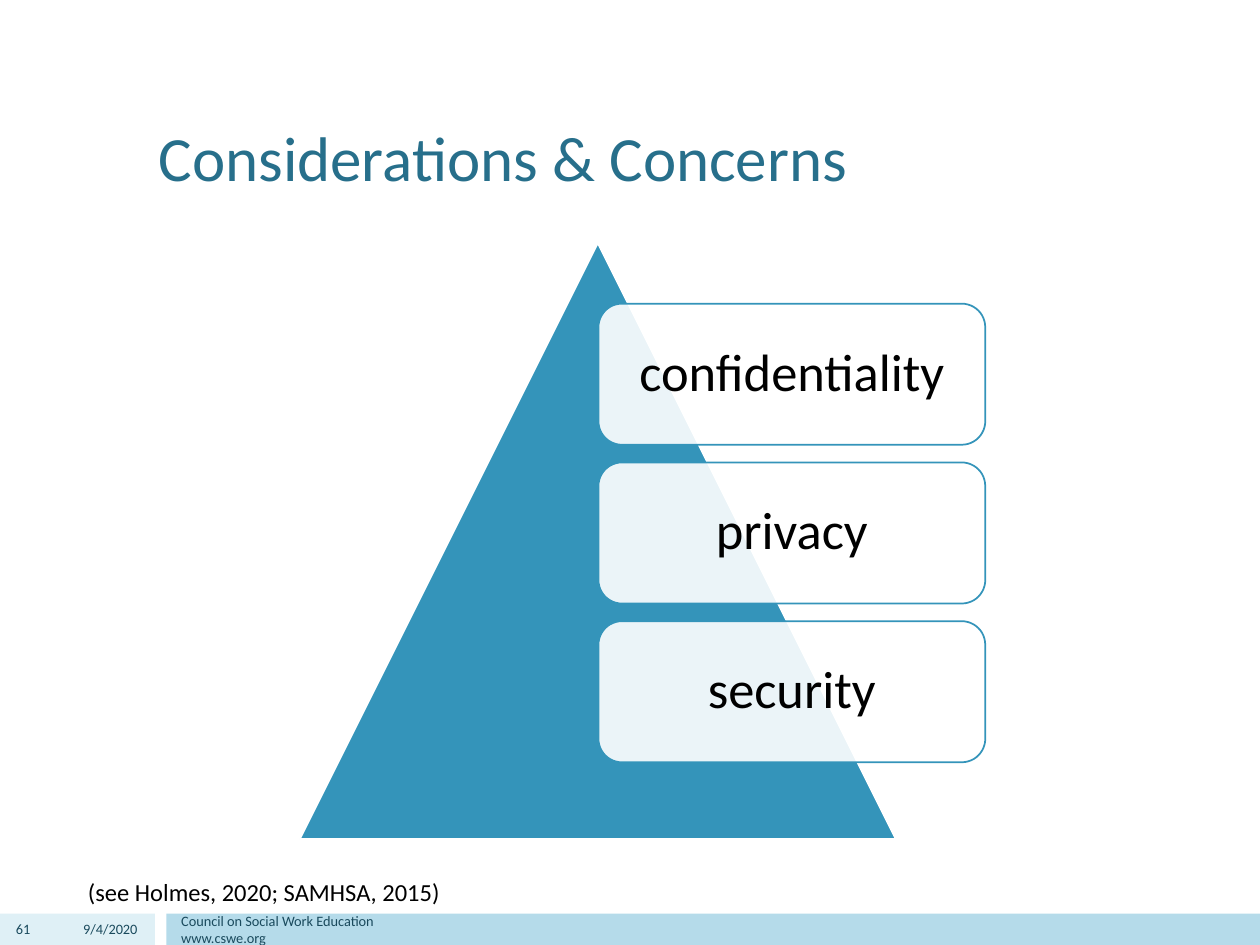
from lxml import etree
from pptx import Presentation
from pptx.dml.color import RGBColor
from pptx.enum.shapes import MSO_SHAPE
from pptx.enum.text import MSO_ANCHOR, MSO_AUTO_SIZE, PP_ALIGN
from pptx.oxml.ns import qn
from pptx.util import Inches, Pt

RECTANGLE = MSO_SHAPE.RECTANGLE
TRIANGLE = MSO_SHAPE.ISOSCELES_TRIANGLE
ROUNDED_RECTANGLE = MSO_SHAPE.ROUNDED_RECTANGLE
TOP, MIDDLE, BOTTOM = MSO_ANCHOR.TOP, MSO_ANCHOR.MIDDLE, MSO_ANCHOR.BOTTOM
LEFT, CENTER, RIGHT = PP_ALIGN.LEFT, PP_ALIGN.CENTER, PP_ALIGN.RIGHT
FIT_SHAPE = MSO_AUTO_SIZE.SHAPE_TO_FIT_TEXT

WHITE = RGBColor(0xFF, 0xFF, 0xFF)
BLACK = RGBColor(0x00, 0x00, 0x00)
BLUE = RGBColor(0x34, 0x94, 0xBA)
TITLE_BLUE = RGBColor(0x27, 0x6F, 0x8B)
FOOTER_BLUE = RGBColor(0x1A, 0x4A, 0x5D)
PALE_BLUE = RGBColor(0xDF, 0xF0, 0xF6)
LIGHT_BLUE = RGBColor(0xB5, 0xDB, 0xEA)

FONT = "Calibri"
FOOTER_TOP, FOOTER_HEIGHT = 7.25, 0.25
CONCERNS = ["confidentiality", "privacy", "security"]
CARD_TOP, CARD_STEP = 2.41, 1.26


def write_text(shape, text, size, color, alignment=LEFT, anchor=MIDDLE):
    frame = shape.text_frame
    frame.word_wrap = True
    frame.vertical_anchor = anchor
    frame.text = text
    paragraph = frame.paragraphs[0]
    paragraph.alignment = alignment
    for run in paragraph.runs:
        run.font.name = FONT
        run.font.size = Pt(size)
        run.font.color.rgb = color


def add_text(slide, box, text, size, color, alignment=LEFT, anchor=MIDDLE):
    shape = slide.shapes.add_textbox(*map(Inches, box))
    write_text(shape, text, size, color, alignment, anchor)
    return shape


def add_filled_shape(slide, kind, box, fill, line=None):
    shape = slide.shapes.add_shape(kind, *map(Inches, box))
    shape.shadow.inherit = False
    shape.fill.solid()
    shape.fill.fore_color.rgb = fill
    if line is None:
        shape.line.fill.background()
    else:
        shape.line.color.rgb = line
        shape.line.width = Pt(1)
    return shape


def set_opacity(shape, percent):
    color = shape.fill._xPr.find(qn("a:solidFill"))[0]
    etree.SubElement(color, qn("a:alpha")).set("val", str(percent * 1000))


def add_concern_card(slide, top, text):
    card = add_filled_shape(slide, ROUNDED_RECTANGLE, (4.75, top, 3.07, 1.12), WHITE, BLUE)
    set_opacity(card, 90)
    write_text(card, text, 30, BLACK, CENTER)
    card.text_frame.paragraphs[0].line_spacing = 0.9


def add_footer(slide):
    for left, width, color in [(0, 1.23, PALE_BLUE), (1.32, 8.68, LIGHT_BLUE)]:
        add_filled_shape(slide, RECTANGLE, (left, FOOTER_TOP, width, FOOTER_HEIGHT), color)
    for left, width, text, alignment in [
        (0, 0.34, "61", RIGHT),
        (0.37, 0.82, "9/4/2020", RIGHT),
        (1.34, 7.5, "Council on Social Work Education\vwww.cswe.org", LEFT),
    ]:
        box = (left, FOOTER_TOP, width, FOOTER_HEIGHT)
        add_text(slide, box, text, 8.2, FOOTER_BLUE, alignment)


def main():
    presentation = Presentation()
    presentation.slide_width = Inches(10)
    presentation.slide_height = Inches(7.5)
    slide = presentation.slides.add_slide(presentation.slide_layouts[6])

    add_footer(slide)
    add_text(slide, (1.16, 0.3, 7.69, 1.29), "Considerations & Concerns", 36, TITLE_BLUE,
             anchor=BOTTOM)
    citation = add_text(slide, (0.6, 6.91, 3.06, 0.34), "(see Holmes, 2020; SAMHSA, 2015)",
                        14, BLACK, anchor=TOP)
    citation.text_frame.word_wrap = False
    citation.text_frame.auto_size = FIT_SHAPE

    add_filled_shape(slide, TRIANGLE, (2.38, 1.93, 4.73, 4.73), BLUE, WHITE)
    for index, concern in enumerate(CONCERNS):
        add_concern_card(slide, CARD_TOP + index * CARD_STEP, concern)

    presentation.save("out.pptx")


if __name__ == "__main__":
    main()
